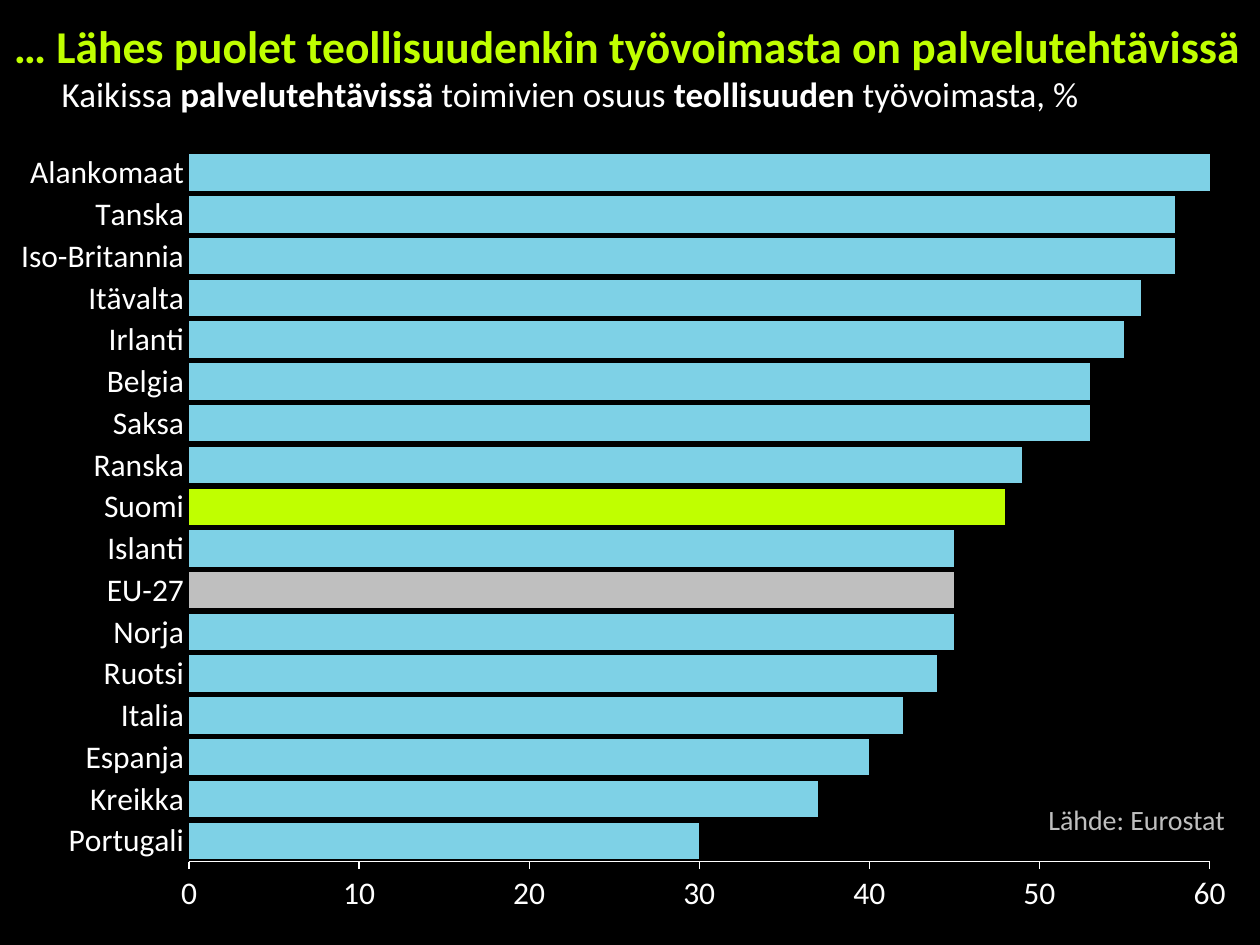
"""Build a slide ranking countries by the share of industrial staff in service tasks."""
import dataclasses

import lxml.etree
import pptx
import pptx.chart.axis
import pptx.chart.chart
import pptx.chart.data
import pptx.dml.color
import pptx.enum.chart
import pptx.enum.text
import pptx.oxml
import pptx.oxml.ns
import pptx.slide
import pptx.text.text
import pptx.util

Inches = pptx.util.Inches
Pt = pptx.util.Pt

COLORS = {
    "background": "000000",
    "text": "FFFFFF",
    "bar": "7ED1E6",
    "finland": "C0FF00",
    "average": "BFBFBF",
}
TEXT_FONT = "Calibri"
CHART_FONT = "Cabin"


@dataclasses.dataclass(frozen=True)
class Span:
    """A run of text with its look."""

    text: str
    size: int
    color: str
    bold: bool = False


@dataclasses.dataclass(frozen=True)
class Bar:
    """A country with its share in percent."""

    country: str
    share: int
    color: str = "bar"


HEADLINE = [Span("… Lähes puolet teollisuudenkin työvoimasta on palvelutehtävissä", 26, "finland", True)]
SUBTITLE = [
    Span("Kaikissa ", 20, "text"),
    Span("palvelutehtävissä", 20, "text", True),
    Span(" toimivien osuus ", 20, "text"),
    Span("teollisuuden", 20, "text", True),
    Span(" työvoimasta, %", 20, "text"),
]
SOURCE = [Span("Lähde: Eurostat", 16, "average")]
BARS = [
    Bar("Portugali", 30),
    Bar("Kreikka", 37),
    Bar("Espanja", 40),
    Bar("Italia", 42),
    Bar("Ruotsi", 44),
    Bar("Norja", 45),
    Bar("EU-27", 45, "average"),
    Bar("Islanti", 45),
    Bar("Suomi", 48, "finland"),
    Bar("Ranska", 49),
    Bar("Saksa", 53),
    Bar("Belgia", 53),
    Bar("Irlanti", 55),
    Bar("Itävalta", 56),
    Bar("Iso-Britannia", 58),
    Bar("Tanska", 58),
    Bar("Alankomaat", 60),
]


def rgb(name: str) -> pptx.dml.color.RGBColor:
    """Return the named colour."""
    return pptx.dml.color.RGBColor.from_string(COLORS[name])


def style_font(font: pptx.text.text.Font, name: str, size: int, color: str) -> None:
    """Set typeface, size and colour."""
    font.name = name
    font.size = Pt(size)
    font.color.rgb = rgb(color)


def write_spans(para: pptx.text.text._Paragraph, spans: list[Span]) -> None:
    """Add the spans to a left-aligned paragraph."""
    para.alignment = pptx.enum.text.PP_ALIGN.LEFT
    for span in spans:
        run = para.add_run()
        run.text = span.text
        style_font(run.font, TEXT_FONT, span.size, span.color)
        run.font.bold = span.bold


def clear_insets(frame: pptx.text.text.TextFrame) -> None:
    """Start the text at the top left corner of its box."""
    frame.margin_left = frame.margin_top = frame.margin_right = frame.margin_bottom = 0
    frame.vertical_anchor = pptx.enum.text.MSO_ANCHOR.TOP


def write_title(page: pptx.slide.Slide) -> None:
    """Fill the title placeholder with headline and indented subtitle."""
    title = page.shapes.title
    title.left, title.top = Inches(0.11), Inches(0.14)
    title.width, title.height = Inches(10), Inches(0.77)
    frame = title.text_frame
    clear_insets(frame)
    frame.word_wrap = True
    frame.auto_size = pptx.enum.text.MSO_AUTO_SIZE.NONE
    write_spans(frame.paragraphs[0], HEADLINE)
    subtitle = frame.add_paragraph()
    write_spans(subtitle, SUBTITLE)
    subtitle._p.get_or_add_pPr().set("marL", str(Inches(0.38)))


def style_axis(axis: pptx.chart.axis._BaseAxis, tick: int, color: str, width: float) -> None:
    """Set the line, ticks and labels of an axis."""
    axis.has_major_gridlines = False
    axis.major_tick_mark = tick
    axis.minor_tick_mark = pptx.enum.chart.XL_TICK_MARK.NONE
    axis.format.line.color.rgb = rgb(color)
    axis.format.line.width = Pt(width)
    style_font(axis.tick_labels.font, TEXT_FONT, 18, "text")


def fix_plot_area(chart: pptx.chart.chart.Chart, **fractions: float) -> None:
    """Pin the inner plot area to fractions of the chart."""
    plot_area = chart._chartSpace.chart.plotArea
    for old in plot_area.findall(pptx.oxml.ns.qn("c:layout")):
        plot_area.remove(old)
    layout = lxml.etree.Element(pptx.oxml.ns.qn("c:layout"))
    manual = lxml.etree.SubElement(layout, pptx.oxml.ns.qn("c:manualLayout"))
    settings = {"layoutTarget": "inner", "xMode": "edge", "yMode": "edge", **fractions}
    for tag, value in settings.items():
        lxml.etree.SubElement(manual, pptx.oxml.ns.qn(f"c:{tag}")).set("val", str(value))
    plot_area.insert(0, layout)


def draw_chart(page: pptx.slide.Slide) -> None:
    """Draw the bar chart of all countries."""
    data = pptx.chart.data.CategoryChartData()
    data.categories = [bar.country for bar in BARS]
    data.add_series("Series 1", [bar.share for bar in BARS])
    chart = page.shapes.add_chart(
        pptx.enum.chart.XL_CHART_TYPE.BAR_CLUSTERED,
        Inches(0), Inches(1.08), Inches(10), Inches(6.26), data,
    ).chart
    chart.has_legend = False
    chart.has_title = False
    style_font(chart.font, CHART_FONT, 12, "text")
    style_axis(chart.category_axis, pptx.enum.chart.XL_TICK_MARK.NONE, "background", 1)
    style_axis(chart.value_axis, pptx.enum.chart.XL_TICK_MARK.OUTSIDE, "text", 0.75)
    chart.value_axis.minimum_scale = 0
    chart.value_axis.maximum_scale = 60
    chart.value_axis.major_unit = 10
    fix_plot_area(chart, x=0.15, y=0.02, w=0.81, h=0.9)
    plot = chart.plots[0]
    plot.vary_by_categories = False
    plot.gap_width = plot.overlap = 15
    series = plot.series[0]
    series.format.fill.solid()
    series.format.fill.fore_color.rgb = rgb("bar")
    for index, bar in enumerate(BARS):
        if bar.color != "bar":
            fill = series.points[index].format.fill
            fill.solid()
            fill.fore_color.rgb = rgb(bar.color)


def write_source(page: pptx.slide.Slide) -> None:
    """Write the source of the figures."""
    box = page.shapes.add_textbox(Inches(8.32), Inches(6.37), Inches(1.42), Inches(0.27))
    clear_insets(box.text_frame)
    box.text_frame.word_wrap = False
    write_spans(box.text_frame.paragraphs[0], SOURCE)


def main() -> None:
    """Build and save the deck."""
    deck = pptx.Presentation()
    deck.slide_width, deck.slide_height = Inches(10), Inches(7.5)
    page = deck.slides.add_slide(deck.slide_layouts.get_by_name("Title Only"))
    page.background.fill.solid()
    page.background.fill.fore_color.rgb = rgb("background")
    draw_chart(page)
    write_title(page)
    write_source(page)
    deck.save("out.pptx")


if __name__ == "__main__":
    main()
